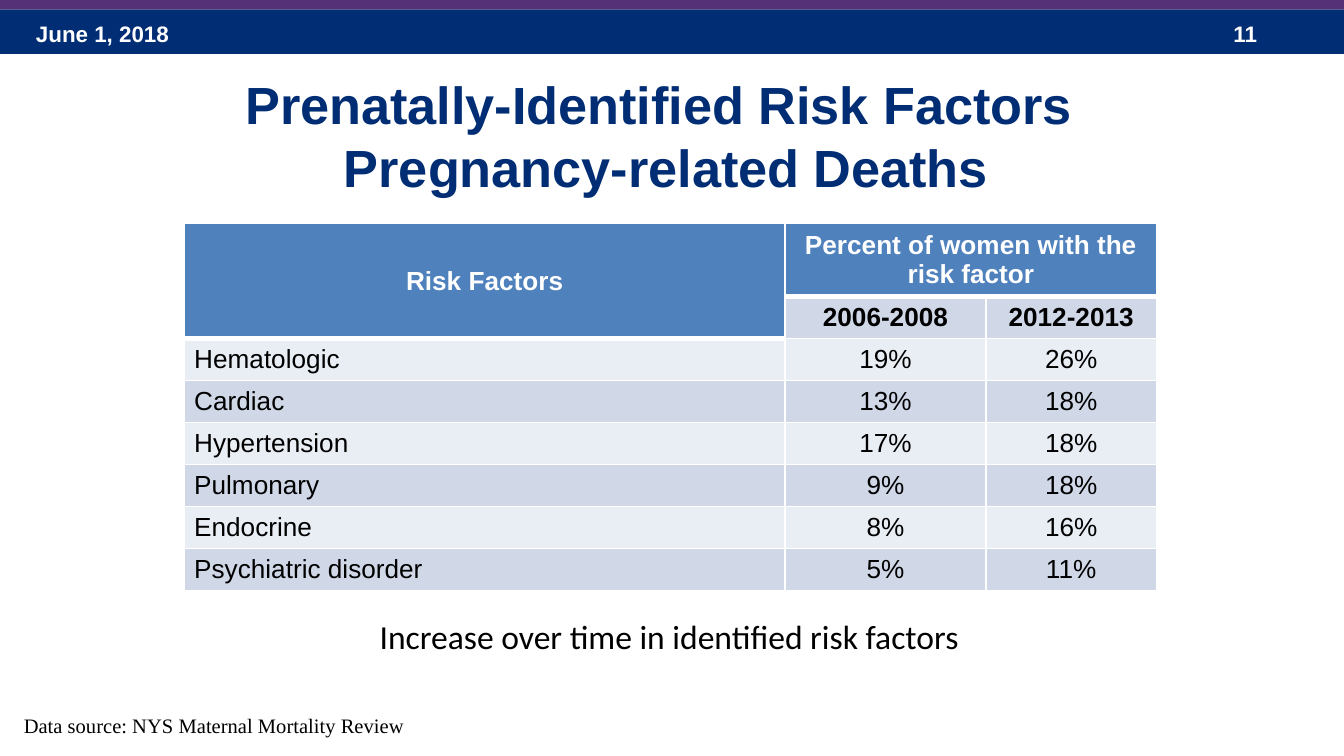
from dataclasses import dataclass

from lxml import etree
from pptx import Presentation
from pptx import util as u
from pptx.dml.color import RGBColor
from pptx.enum import shapes, text
from pptx.oxml.ns import qn


@dataclass(frozen=True)
class Theme:
    navy: str = "002D73"
    plum: str = "553278"
    blue: str = "4F81BD"
    dark: str = "D0D8E8"
    light: str = "E9EDF4"
    white: str = "FFFFFF"
    black: str = "000000"
    title: int = 28
    body: int = 18
    cell: int = 14
    bar: int = 12
    note: int = 11


LEFT, MID = text.PP_ALIGN.LEFT, text.PP_ALIGN.CENTER
TOP, CORE = text.MSO_ANCHOR.TOP, text.MSO_ANCHOR.MIDDLE

HEADS = [
    ["Risk Factors", "Percent of women with the risk factor", ""],
    ["", "2006-2008", "2012-2013"],
]
RISKS = [
    ["Hematologic", "19%", "26%"],
    ["Cardiac", "13%", "18%"],
    ["Hypertension", "17%", "18%"],
    ["Pulmonary", "9%", "18%"],
    ["Endocrine", "8%", "16%"],
    ["Psychiatric disorder", "5%", "11%"],
]


def is_head(row, col):
    """Tell whether a cell belongs to the blue heading area."""
    return row == 0 or (row == 1 and col == 0)


class Page:
    def __init__(self, deck, theme):
        self.theme = theme
        self.slide = deck.slides.add_slide(deck.slide_layouts[6])

    def band(self, top, height, color):
        band = self.slide.shapes.add_shape(
            shapes.MSO_SHAPE.RECTANGLE, 0, u.Cm(top), u.Cm(25.4), u.Cm(height))
        band.shadow.inherit = False
        band.fill.solid()
        band.fill.fore_color.rgb = RGBColor.from_string(color)
        band.line.fill.background()

    def style(self, frame, size, color, bold=False, font="Arial", align=LEFT):
        for para in frame.paragraphs:
            para.alignment = align
            for run in para.runs:
                run.font.name = font
                run.font.size = u.Pt(size)
                run.font.bold = bold
                run.font.color.rgb = RGBColor.from_string(color)

    def label(self, words, left, top, width, height, size, color,
              anchor=TOP, **look):
        box = self.slide.shapes.add_textbox(*map(u.Cm, (left, top, width, height)))
        frame = box.text_frame
        frame.word_wrap = True
        frame.vertical_anchor = anchor
        frame.text = words
        self.style(frame, size, color, **look)

    def edges(self, cell, top, bottom):
        """Draw white cell borders; top and bottom are widths in points."""
        props = cell._tc.get_or_add_tcPr()
        sides = [("a:lnL", 1), ("a:lnR", 1), ("a:lnT", top), ("a:lnB", bottom)]
        for place, (tag, width) in enumerate(sides):
            line = etree.Element(qn(tag), w=str(u.Pt(width)))
            fill = etree.SubElement(line, qn("a:solidFill"))
            etree.SubElement(fill, qn("a:srgbClr"), val=self.theme.white)
            props.insert(place, line)

    def cell(self, cell, words, row, col):
        look, head = self.theme, is_head(row, col)
        cell.text = words
        cell.vertical_anchor = CORE
        cell.margin_left = cell.margin_right = u.Cm(0.19)
        cell.margin_top = cell.margin_bottom = u.Cm(0.1)
        cell.fill.solid()
        stripe = look.dark if row % 2 else look.light
        cell.fill.fore_color.rgb = RGBColor.from_string(look.blue if head else stripe)
        self.edges(cell, 3 if row and is_head(row - 1, col) else 1, 3 if head else 1)
        self.style(cell.text_frame, look.cell, look.white if head else look.black,
                   bold=row < 2, align=MID if head or col else LEFT)

    def table(self, rows, left, top, widths, heights):
        grid = self.slide.shapes.add_table(
            len(rows), len(widths), u.Cm(left), u.Cm(top),
            u.Cm(sum(widths)), u.Cm(sum(heights))).table
        for col, width in zip(grid.columns, widths):
            col.width = u.Cm(width)
        for row, height in zip(grid.rows, heights):
            row.height = u.Cm(height)
        for r, row in enumerate(rows):
            for c, words in enumerate(row):
                self.cell(grid.cell(r, c), words, r, c)
        grid.cell(0, 0).merge(grid.cell(1, 0))
        grid.cell(0, 1).merge(grid.cell(0, 2))


def main():
    deck = Presentation()
    deck.slide_width, deck.slide_height = u.Cm(25.4), u.Cm(14.29)
    look = Theme()
    page = Page(deck, look)

    page.band(0.18, 0.84, look.navy)
    for words, left, width in [("June 1, 2018", 0.43, 5.92), ("11", 23.06, 1.9)]:
        page.label(words, left, 0.25, width, 0.76, look.bar, look.white,
                   anchor=CORE, bold=True)
    page.band(-0.05, 0.23, look.plum)

    page.label("Prenatally-Identified Risk Factors \nPregnancy-related Deaths",
               2.44, 1.24, 20.29, 2.64, look.title, look.navy, bold=True, align=MID)
    rows = HEADS + RISKS
    page.table(rows, 3.48, 4.22, [11.36, 3.79, 3.23],
               [1.35] + [0.78] * (len(rows) - 1))
    page.label("Increase over time in identified risk factors",
               3.86, 11.51, 17.58, 1.02, look.body, look.black,
               font="Calibri", align=MID)
    page.label("Data source: NYS Maternal Mortality Review",
               0.2, 13.36, 9.5, 0.74, look.note, look.black,
               font="Times New Roman")
    deck.save("out.pptx")


if __name__ == "__main__":
    main()
